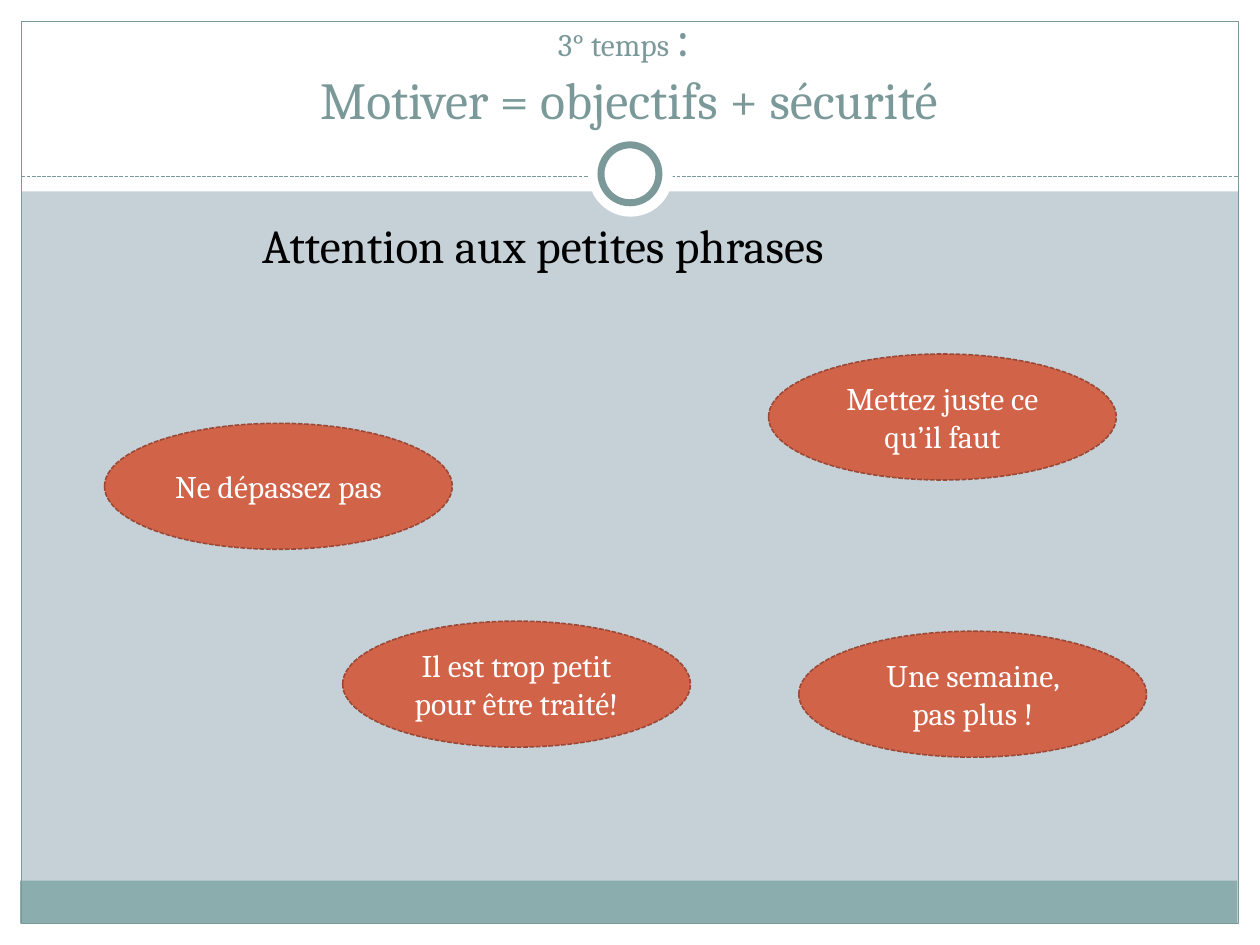
"""Build the slide on motivating through objectives and safety."""
from dataclasses import dataclass

from lxml.etree import SubElement
from pptx import Presentation
from pptx.dml.color import RGBColor
from pptx.enum.dml import MSO_LINE_DASH_STYLE as Dash
from pptx.enum.shapes import MSO_CONNECTOR as Connector, MSO_SHAPE as Shape
from pptx.enum.text import MSO_ANCHOR as Anchor, PP_ALIGN as Align
from pptx.oxml.ns import qn
from pptx.util import Inches, Pt


@dataclass(frozen=True)
class Theme:
    font: str = "Cambria"
    background: str = "C5D1D7"
    white: str = "FFFFFF"
    black: str = "000000"
    band: str = "8CADAE"
    accent: str = "7C999A"
    bubble: str = "D16349"
    bubble_line: str = "9B4936"
    title_size: float = 29.7
    heading_size: float = 27
    text_size: float = 18


THEME = Theme()
BUBBLES = [
    (0.83, 3.36, "Ne dépassez pas"),
    (6.1, 2.81, "Mettez juste ce qu’il faut"),
    (2.72, 4.93, "Il est trop petit pour être traité!"),
    (6.34, 5.01, "Une semaine, pas plus !"),
]


def set_line(line, color, width, dash=None):
    line.color.rgb = RGBColor.from_string(color)
    line.width = Pt(width)
    if dash:
        line.dash_style = dash


def set_font(font, size, color):
    font.name = THEME.font
    font.size = Pt(size)
    font.color.rgb = RGBColor.from_string(color)


def add_figure(slide, kind, box, fill=None, line=None):
    shape = slide.shapes.add_shape(kind, *map(Inches, box))
    shape.shadow.inherit = False
    if fill:
        shape.fill.solid()
        shape.fill.fore_color.rgb = RGBColor.from_string(fill)
    else:
        shape.fill.background()
    if line:
        set_line(shape.line, *line)
    else:
        shape.line.fill.background()
    return shape


def add_frame(slide):
    for box in ((0, 7.33, 10, 0.17), (0, 0, 10, 1.52),
                (0, 0, 0.17, 7.5), (9.83, 0, 0.17, 7.5)):
        add_figure(slide, Shape.RECTANGLE, box, THEME.white)
    add_figure(slide, Shape.RECTANGLE, (0.16, 6.99, 9.66, 0.34), THEME.band)
    add_figure(slide, Shape.RECTANGLE, (0.17, 0.17, 9.66, 7.16),
               line=(THEME.accent, 0.75))


def add_divider(slide):
    ends = map(Inches, (0.17, 1.4, 9.83, 1.4))
    connector = slide.shapes.add_connector(Connector.STRAIGHT, *ends)
    set_line(connector.line, THEME.accent, 0.75, Dash.SQUARE_DOT)
    SubElement(connector._element.spPr, qn("a:effectLst"))
    add_figure(slide, Shape.OVAL, (4.67, 1.05, 0.67, 0.67), THEME.white)
    add_figure(slide, Shape.OVAL, (4.77, 1.15, 0.46, 0.46), THEME.white,
               (THEME.accent, 4))


def add_text_box(slide, box):
    frame = slide.shapes.add_textbox(*map(Inches, box)).text_frame
    frame.word_wrap = True
    return frame


def add_heading(slide):
    frame = add_text_box(slide, (0.33, 1.67, 9.3, 5))
    frame.margin_left = Inches(1.75)
    paragraph = frame.paragraphs[0]
    paragraph.text = "Attention aux petites phrases"
    set_font(paragraph.font, THEME.heading_size, THEME.black)


def add_title(slide):
    frame = add_text_box(slide, (0.33, 0.25, 9.33, 0.83))
    frame.vertical_anchor = Anchor.BOTTOM
    paragraph = frame.paragraphs[0]
    paragraph.alignment = Align.CENTER
    for text, size in (("3° temps ", THEME.text_size),
                       (": \vMotiver = objectifs + sécurité", THEME.title_size)):
        first, *rest = text.split("\v")
        for index, part in enumerate([first, *rest]):
            if index:
                paragraph.add_line_break()
            run = paragraph.add_run()
            run.text = part
            set_font(run.font, size, THEME.accent)


def add_bubble(slide, left, top, text):
    shape = add_figure(slide, Shape.OVAL, (left, top, 2.76, 1), THEME.bubble,
                       (THEME.bubble_line, 0.9, Dash.SQUARE_DOT))
    frame = shape.text_frame
    frame.word_wrap = True
    frame.vertical_anchor = Anchor.MIDDLE
    paragraph = frame.paragraphs[0]
    paragraph.text = text
    paragraph.alignment = Align.CENTER
    set_font(paragraph.font, THEME.text_size, THEME.white)


def main():
    presentation = Presentation()
    presentation.slide_width = Inches(10)
    presentation.slide_height = Inches(7.5)
    slide = presentation.slides.add_slide(presentation.slide_layouts[6])
    slide.background.fill.solid()
    slide.background.fill.fore_color.rgb = RGBColor.from_string(THEME.background)
    add_frame(slide)
    add_divider(slide)
    add_heading(slide)
    add_title(slide)
    for left, top, text in BUBBLES:
        add_bubble(slide, left, top, text)
    presentation.save("out.pptx")


if __name__ == "__main__":
    main()
